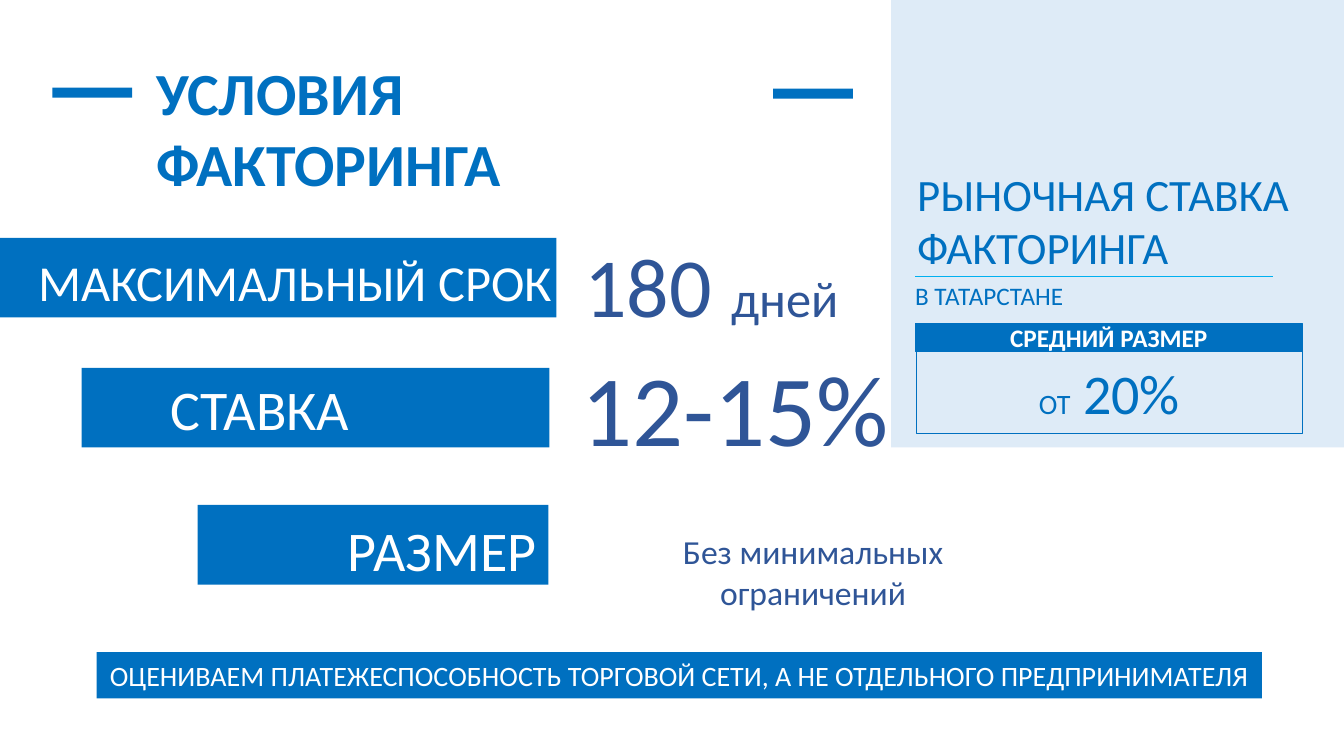
from lxml.etree import SubElement
from pptx import Presentation
from pptx.dml.color import RGBColor
from pptx.enum.shapes import MSO_CONNECTOR as Connector, MSO_SHAPE as Shape
from pptx.enum.text import MSO_ANCHOR as Anchor, MSO_AUTO_SIZE as AutoSize, PP_ALIGN as Align
from pptx.oxml.ns import qn
from pptx.util import Inches, Pt

WIDTH, HEIGHT = Inches(13.333), Inches(7.5)
FONT = "Calibri"
BLUE, NAVY, PALE, CYAN, WHITE = "0070C0", "2F5597", "DEEBF7", "00B0F0", "FFFFFF"
BAR_HEIGHT = 10.53
BAR_SPANS = [(0, 31.47, 41.4), (6.08, 48.67, 34.8), (14.7, 66.8, 26.1)]


def color(value):
    return RGBColor.from_string(value)


def across(share):
    return int(WIDTH * share / 100)


def down(share):
    return int(HEIGHT * share / 100)


def area(left, top, width, height):
    """Turn percentages of the slide into a position and a size."""
    return across(left), down(top), across(width), down(height)


def write(frame, spans, fill, bold=False, align=Align.LEFT):
    """Fill a frame with one paragraph made of (text, size) spans."""
    para = frame.paragraphs[0]
    para.alignment = align
    for text, size in spans:
        span = para.add_run()
        span.text = text
        span.font.name = FONT
        span.font.size = Pt(size)
        span.font.bold = bold
        span.font.color.rgb = color(fill)


def add_block(page, place, fill=None, outline=None):
    block = page.shapes.add_shape(Shape.RECTANGLE, *area(*place))
    block.shadow.inherit = False
    if fill:
        block.fill.solid()
        block.fill.fore_color.rgb = color(fill)
    else:
        block.fill.background()
    if outline:
        block.line.color.rgb = color(outline)
        block.line.width = Pt(1)
    else:
        block.line.fill.background()
    return block


def add_caption_block(page, place, spans, text_color, fill=None, outline=None, bold=False):
    frame = add_block(page, place, fill, outline).text_frame
    frame.word_wrap = True
    frame.vertical_anchor = Anchor.MIDDLE
    write(frame, spans, text_color, bold, Align.CENTER)


def add_label(page, place, spans, text_color, wrap=True, bold=False, align=Align.LEFT):
    frame = page.shapes.add_textbox(*area(*place)).text_frame
    frame.word_wrap = wrap
    frame.auto_size = AutoSize.SHAPE_TO_FIT_TEXT
    write(frame, spans, text_color, bold, align)


def add_rule(page, left, right, top):
    rule = page.shapes.add_connector(
        Connector.STRAIGHT, across(left), down(top), across(right), down(top))
    rule.line.color.rgb = color(CYAN)
    rule.line.width = Pt(0.5)
    SubElement(rule._element.spPr, qn("a:effectLst"))


def add_title(page):
    for left, top in [(3.9, 11.6), (57.53, 11.73)]:
        add_block(page, (left, top, 5.93, 1.33), BLUE)
    add_label(page, (10.88, 6.67, 45.23, 10.93), [("УСЛОВИЯ ФАКТОРИНГА", 42.7)], BLUE, bold=True)


def add_terms(page):
    for left, top, width in BAR_SPANS:
        add_block(page, (left, top, width, BAR_HEIGHT), BLUE)
    add_label(page, (2.1, 32.53, 48.68, 9.47), [("МАКСИМАЛЬНЫЙ СРОК", 36)], WHITE)
    add_label(page, (11.93, 48.93, 28.95, 10.27), [("СТАВКА", 40)], WHITE)
    add_label(page, (25.13, 67.6, 23.1, 10.27), [("РАЗМЕР", 40)], WHITE)
    add_label(page, (42.75, 30.27, 20.48, 14.8), [("180 ", 60), ("дней", 36)], NAVY, wrap=False)
    add_label(page, (42.53, 45.07, 24.53, 17.47), [("12-15%", 72)], NAVY, wrap=False)
    add_label(page, (44, 69.6, 33, 6.67), [("Без минимальных ограничений", 24)], NAVY,
              align=Align.CENTER)


def add_market_panel(page):
    add_block(page, (66.3, 0, 33.7, 59.2), PALE)
    add_label(page, (67.5, 21.33, 32.5, 15.73), [("РЫНОЧНАЯ СТАВКА ФАКТОРИНГА", 32)], BLUE)
    add_label(page, (67.35, 36.4, 23.18, 5.33), [("В ТАТАРСТАНЕ", 18)], BLUE)
    add_caption_block(page, (68.1, 42.8, 28.8, 3.73), [("СРЕДНИЙ РАЗМЕР", 18)], WHITE,
                      fill=BLUE, outline=BLUE, bold=True)
    add_caption_block(page, (68.18, 46.53, 28.73, 10.8), [("ОТ", 20), (" 20%", 40)], BLUE,
                      outline=BLUE)
    add_rule(page, 68.1, 94.73, 36.53)


def main():
    deck = Presentation()
    deck.slide_width, deck.slide_height = WIDTH, HEIGHT
    page = deck.slides.add_slide(deck.slide_layouts[6])
    add_market_panel(page)
    add_title(page)
    add_terms(page)
    add_caption_block(
        page, (7.2, 86.27, 86.7, 6.13),
        [("ОЦЕНИВАЕМ ПЛАТЕЖЕСПОСОБНОСТЬ ТОРГОВОЙ СЕТИ, А НЕ ОТДЕЛЬНОГО ПРЕДПРИНИМАТЕЛЯ", 20)],
        WHITE, fill=BLUE)
    deck.save("out.pptx")


if __name__ == "__main__":
    main()
